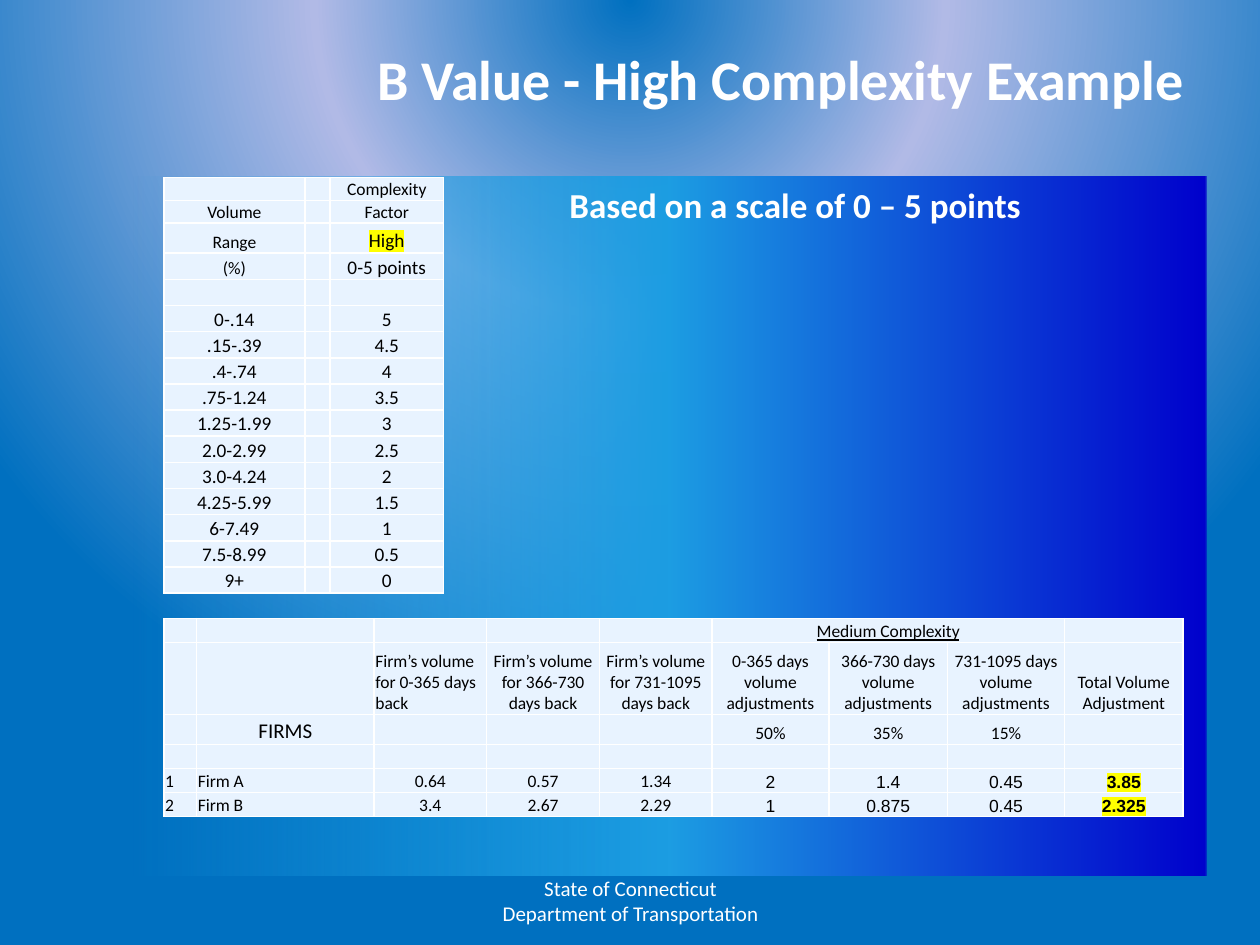
from lxml.etree import SubElement
from pptx import Presentation
from pptx.dml.color import RGBColor
from pptx.enum.shapes import MSO_SHAPE
from pptx.enum.text import MSO_ANCHOR, PP_ALIGN
from pptx.oxml.ns import qn
from pptx.util import Inches, Pt

COLORS = {
    "white": "FFFFFF", "black": "000000", "cell": "E8F3FF", "mark": "FFFF00",
    "blue": "0070C0", "lilac": "B1BAE6", "navy": "0000CC", "sky": "1C9DE2",
}
LEFT, CENTER, RIGHT = PP_ALIGN.LEFT, PP_ALIGN.CENTER, PP_ALIGN.RIGHT

TITLE = "B Value - High Complexity Example"
SCALE = "Based on a scale of 0 – 5 points"
FOOTER = "State of Connecticut\nDepartment of Transportation"

HEADS = [("", "Complexity"), ("Volume", "Factor"), ("Range", "High"),
         ("(%)", "0-5 points"), ("", "")]
POINTS = [
    ("0-.14", "5"), (".15-.39", "4.5"), (".4-.74", "4"), (".75-1.24", "3.5"),
    ("1.25-1.99", "3"), ("2.0-2.99", "2.5"), ("3.0-4.24", "2"),
    ("4.25-5.99", "1.5"), ("6-7.49", "1"), ("7.5-8.99", "0.5"), ("9+", "0"),
]
RANGES = [(name, "", value) for name, value in HEADS + POINTS]
FIRMS = [
    ("", "", "", "", "", "Medium Complexity", "", "", ""),
    ("", "", "Firm’s volume for 0-365 days back",
     "Firm’s volume for 366-730 days back",
     "Firm’s volume for 731-1095 days back",
     "0-365 days volume adjustments", "366-730 days volume adjustments",
     "731-1095 days volume adjustments", "Total Volume Adjustment"),
    ("", "FIRMS", "", "", "", "50%", "35%", "15%", ""),
    ("",) * 9,
    ("1", "Firm A", "0.64", "0.57", "1.34", "2", "1.4", "0.45", "3.85"),
    ("2", "Firm B", "3.4", "2.67", "2.29", "1", "0.875", "0.45", "2.325"),
]


def rgb(name):
    return RGBColor.from_string(COLORS[name])


def solid(node, name):
    SubElement(SubElement(node, qn("a:solidFill")), qn("a:srgbClr"), val=COLORS[name])


def write(frame, text, size=10, font="Calibri", color="black", align=CENTER,
          bold=False, under=False, mark=False):
    para = frame.paragraphs[0]
    para.text = text
    para.alignment = align
    for run in para.runs:
        face = run.font
        face.size, face.bold, face.underline = Pt(size), bold, under
        face.color.rgb = rgb(color)
        if mark:
            light = SubElement(run._r.get_or_add_rPr(), qn("a:highlight"))
            SubElement(light, qn("a:srgbClr"), val=COLORS["mark"])
        face.name = font
    if not text:
        SubElement(para._p, qn("a:endParaRPr"), sz=str(size * 100))


def place(slide, text, box, **style):
    frame = slide.shapes.add_textbox(*map(Inches, box)).text_frame
    frame.word_wrap = True
    frame.vertical_anchor = MSO_ANCHOR.MIDDLE
    write(frame, text, color="white", **style)


def blend(fill, root, stops):
    """Give a fill new gradient stops; return its XML for the direction."""
    fill.gradient()
    grad = next(root.iter(qn("a:gradFill")))
    for child in list(grad):
        grad.remove(child)
    group = SubElement(grad, qn("a:gsLst"))
    for pos, name, alpha in stops:
        stop = SubElement(group, qn("a:gs"), pos=str(pos * 1000))
        tint = SubElement(stop, qn("a:srgbClr"), val=COLORS[name])
        if alpha < 100:
            SubElement(tint, qn("a:alpha"), val=str(alpha * 1000))
    return grad


def border(cell):
    for side in ("lnL", "lnR", "lnT", "lnB"):
        line = SubElement(cell._tc.get_or_add_tcPr(), qn("a:" + side), w=str(Pt(1)))
        solid(line, "white")


def grid(slide, rows, left, top, widths, heights, style):
    """Add a table whose cell format comes from style(row, column)."""
    size = map(Inches, (left, top, sum(widths), sum(heights)))
    table = slide.shapes.add_table(len(rows), len(widths), *size).table
    table.first_row = table.horz_banding = False
    for col, width in zip(table.columns, widths):
        col.width = Inches(width)
    for r, (row, height) in enumerate(zip(rows, heights)):
        table.rows[r].height = Inches(height)
        for c, text in enumerate(row):
            cell = table.cell(r, c)
            cell.margin_left = cell.margin_right = cell.margin_top = Inches(0.01)
            cell.margin_bottom = 0
            cell.vertical_anchor = MSO_ANCHOR.BOTTOM
            border(cell)
            cell.fill.solid()
            cell.fill.fore_color.rgb = rgb("cell")
            write(cell.text_frame, text, **style(r, c))
    return table


def range_style(r, c):
    high = (r, c) == (2, 2)
    return {"size": 11 if r > 4 or high or (r, c) == (3, 2) else 10, "mark": high}


def firm_style(r, c):
    data = r > 3
    total = data and c == 8
    return {
        "size": 12 if (r, c) == (2, 1) else 10,
        "font": "Arial" if data and c > 4 else "Calibri",
        "align": LEFT if (data and c < 2) or (r, c) == (1, 2) else CENTER,
        "bold": total, "mark": total, "under": r == 0,
    }


def main():
    deck = Presentation()
    deck.slide_width, deck.slide_height = Inches(10), Inches(7.5)
    slide = deck.slides.add_slide(deck.slide_layouts[6])

    grad = blend(slide.background.fill, slide._element,
                 [(0, "blue", 100), (40, "lilac", 100), (100, "blue", 100)])
    shade = SubElement(grad, qn("a:path"), {"path": "circle"})
    SubElement(shade, qn("a:fillToRect"), l="50000", t="-80000", r="50000", b="180000")

    place(slide, TITLE, (0.5, 0.3, 9, 0.64), size=32, bold=True, align=RIGHT)
    place(slide, FOOTER, (3.42, 6.95, 3.17, 0.4), size=12)

    panel = slide.shapes.add_shape(MSO_SHAPE.RECTANGLE, *map(Inches, (1.05, 1.4, 8.53, 5.55)))
    panel.shadow.inherit = False
    panel.line.fill.background()
    grad = blend(panel.fill, panel._element,
                 [(0, "navy", 100), (50, "sky", 100), (100, "sky", 0)])
    SubElement(grad, qn("a:lin"), ang=str(180 * 60000), scaled="0")
    frame = panel.text_frame
    frame.word_wrap = True
    frame.vertical_anchor = MSO_ANCHOR.TOP
    frame.margin_left, frame.margin_top = Inches(3.47), Inches(0.06)
    write(frame, SCALE, size=20, color="white", align=LEFT, bold=True)

    table = grid(slide, FIRMS, 1.3, 4.91,
                 [0.26, 1.41, 0.89, 0.9, 0.89] + [0.93, 0.94] * 2,
                 [0.19, 0.57, 0.24] + [0.19] * 3, firm_style)
    table.cell(0, 5).merge(table.cell(0, 7))
    grid(slide, RANGES, 1.3, 1.41, [1.12, 0.2, 0.9],
         [0.18, 0.18, 0.24] + [2.7 / 13] * 13, range_style)
    deck.save("out.pptx")


if __name__ == "__main__":
    main()
